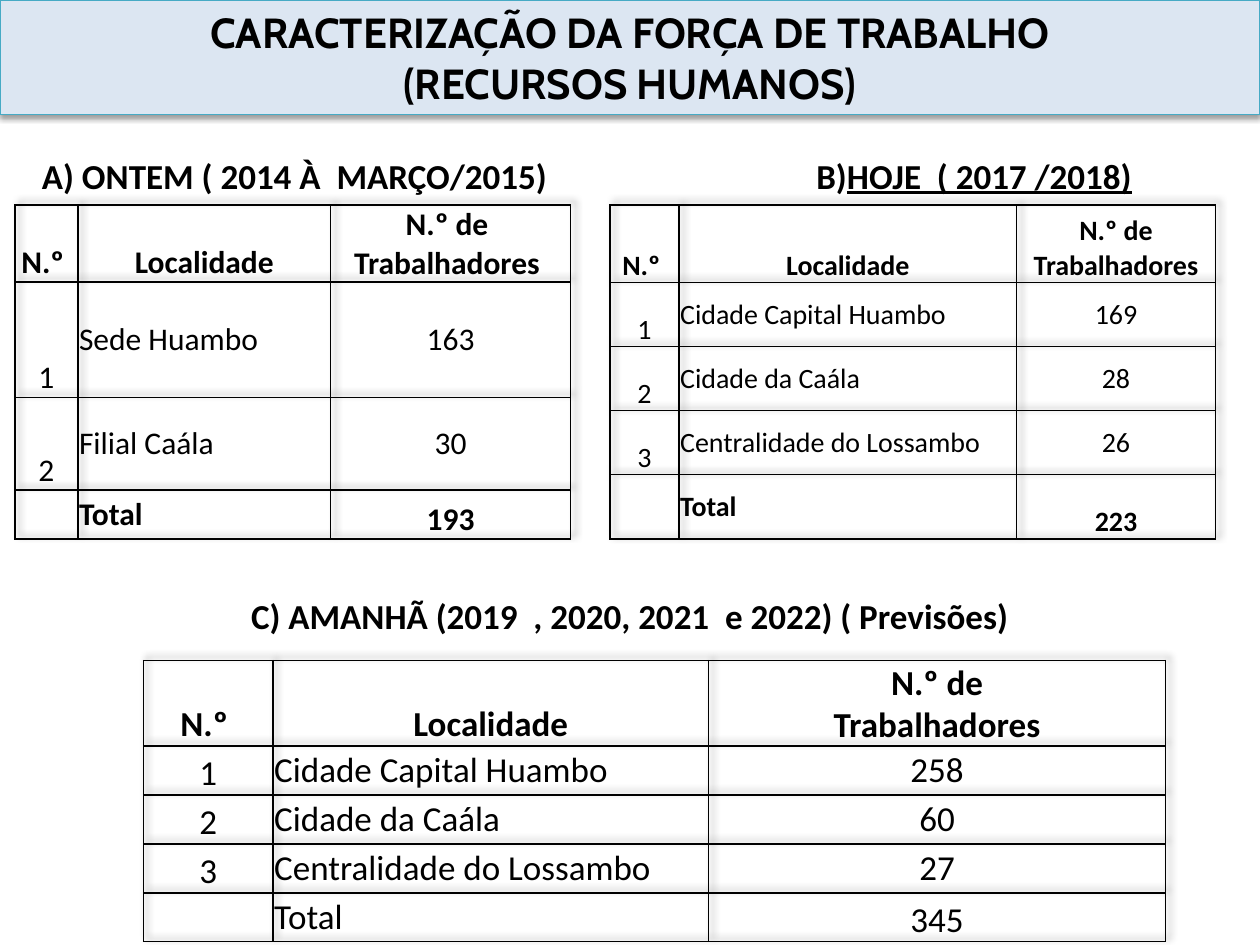
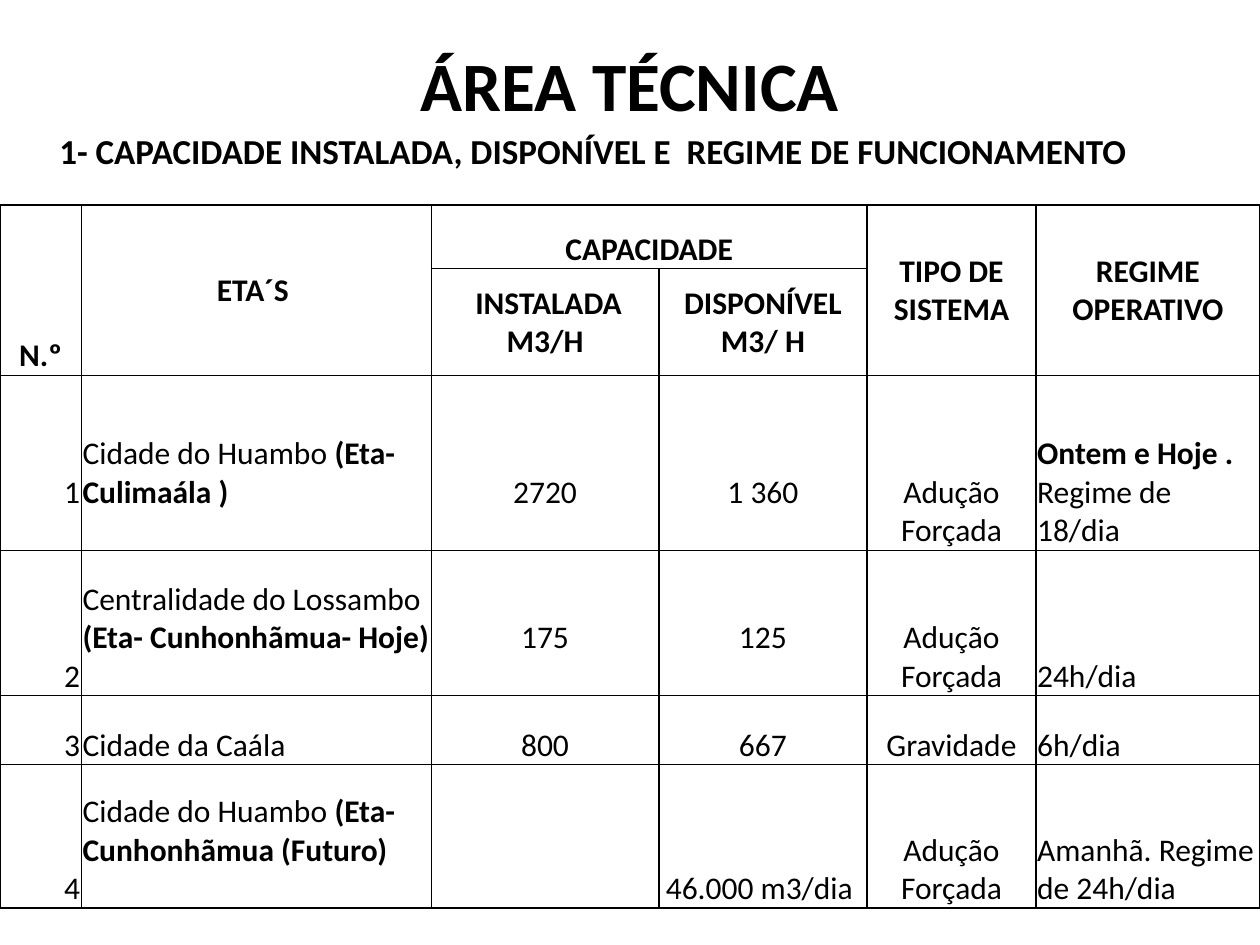
from dataclasses import dataclass

from lxml.etree import SubElement
from pptx import Presentation
from pptx.dml.color import RGBColor
from pptx.enum.shapes import MSO_SHAPE
from pptx.enum.text import MSO_ANCHOR, PP_ALIGN
from pptx.oxml import parse_xml
from pptx.oxml.ns import nsdecls, qn
from pptx.util import Pt


@dataclass(frozen=True)
class Theme:
    ink: str = "000000"
    band: str = "DCE6F2"
    band_line: str = "46AAC5"
    font: str = "Calibri"
    band_font: str = "Cabin"
    title: float = 39.6
    band_title: float = 24
    heading: float = 20
    body: float = 18
    small: float = 16


THEME = Theme()
LEFT, CENTER, RIGHT = PP_ALIGN.LEFT, PP_ALIGN.CENTER, PP_ALIGN.RIGHT
MIDDLE, BOTTOM = MSO_ANCHOR.MIDDLE, MSO_ANCHOR.BOTTOM
SHADOW = (
    f'<a:effectLst {nsdecls("a")}><a:outerShdw blurRad="{{blur}}" dist="{{distance}}" '
    f'dir="{{direction}}" rotWithShape="0"><a:srgbClr val="{THEME.ink}">'
    '<a:alpha val="{alpha}"/></a:srgbClr></a:outerShdw></a:effectLst>'
)


def write(holder, text, size=THEME.heading, font=THEME.font, bold=True,
          align=CENTER, anchor=MIDDLE, margin=0.0, lift=0.0):
    """Fill a shape or cell; text is a string, or a list of (text, font settings) runs."""
    frame = holder.text_frame
    frame.word_wrap = True
    box = holder if hasattr(holder, "margin_left") else frame
    box.vertical_anchor = anchor
    box.margin_left = box.margin_right = box.margin_top = Pt(margin)
    box.margin_bottom = Pt(lift)
    paragraphs = [[(line, {})] for line in text.split("\n")] if isinstance(text, str) else [text]
    for index, runs in enumerate(paragraphs):
        paragraph = frame.add_paragraph() if index else frame.paragraphs[0]
        paragraph.alignment = align
        for content, settings in runs:
            if not content:
                continue
            run = paragraph.add_run()
            run.text = content
            run.font.size, run.font.name, run.font.bold = Pt(size), font, bold
            run.font.color.rgb = RGBColor.from_string(THEME.ink)
            for name, value in settings.items():
                setattr(run.font, name, value)


def add_grid(slide, left, top, widths, heights):
    """Add an unfilled table whose cells all have thin borders."""
    table = slide.shapes.add_table(
        len(heights), len(widths), Pt(left), Pt(top), Pt(sum(widths)), Pt(sum(heights))).table
    table.first_row = table.horz_banding = False
    for column, width in zip(table.columns, widths):
        column.width = Pt(width)
    for row, height in zip(table.rows, heights):
        row.height = Pt(height)
    for cell in table.iter_cells():
        properties = cell._tc.get_or_add_tcPr()
        for side in ("L", "R", "T", "B"):
            line = SubElement(properties, qn(f"a:ln{side}"), w=str(Pt(1)))
            fill = SubElement(line, qn("a:solidFill"))
            SubElement(fill, qn("a:srgbClr"), val=THEME.ink)
        cell.fill.background()
    return table


presentation = Presentation()
presentation.slide_width, presentation.slide_height = Pt(720), Pt(540)
blank = presentation.slide_layouts[6]

# Slide 1: workforce
slide = presentation.slides.add_slide(blank)
band = slide.shapes.add_shape(MSO_SHAPE.RECTANGLE, 0, 0, Pt(720), Pt(65.5))
band.fill.solid()
band.fill.fore_color.rgb = RGBColor.from_string(THEME.band)
band.line.color.rgb = RGBColor.from_string(THEME.band_line)
band.line.width = Pt(0.75)
band._element.spPr.append(parse_xml(SHADOW.format(
    blur=Pt(3.1), distance=Pt(1.6), direction=5400000, alpha=38000)))
write(band, "CARACTERIZAÇÃO DA FORÇA DE TRABALHO\n(RECURSOS HUMANOS)",
      size=THEME.band_title, font=THEME.band_font)

headings = [
    (24, 88, 330, LEFT, "A) ONTEM ( 2014 À  MARÇO/2015)"),
    (466.5, 88, 220, LEFT, [("B)", {}), ("HOJE  ( 2017 /2018)", {"underline": True})]),
    (17, 339.5, 686, CENTER, "C) AMANHÃ (2019  , 2020, 2021  e 2022) ( Previsões)"),
]
for left, top, width, align, text in headings:
    heading = slide.shapes.add_textbox(Pt(left), Pt(top), Pt(width), Pt(24))
    write(heading, text, align=align)

workforce_tables = [
    dict(left=8.5, top=117, widths=[36, 144.5, 137], heights=[44, 66, 53, 28],
         size=THEME.body, bold_total=True, header="N.º de \nTrabalhadores ",
         staff=[("Sede Huambo", 163), ("Filial Caála", 30)]),
    dict(left=348.5, top=117, widths=[39.5, 193, 113.5], heights=[44.5] + [36.6] * 4,
         size=THEME.small, bold_total=True, header="N.º de\n Trabalhadores ",
         staff=[("Cidade Capital Huambo", 169), ("Cidade da Caála", 28),
                ("Centralidade do Lossambo", 26)]),
    dict(left=82, top=377.5, widths=[74, 249, 261], heights=[48.5] + [28] * 4,
         size=THEME.heading, bold_total=False, header="N.º de\n Trabalhadores ",
         staff=[("Cidade Capital Huambo", 258), ("Cidade da Caála", 60),
                ("Centralidade do Lossambo", 27)]),
]
for item in workforce_tables:
    table = add_grid(slide, item["left"], item["top"], item["widths"], item["heights"])
    table._tbl.tblPr.insert(0, parse_xml(SHADOW.format(
        blur=Pt(4), distance=Pt(3), direction=18900000, alpha=40000)))
    places = [(str(number), place, str(count))
              for number, (place, count) in enumerate(item["staff"], 1)]
    total = ("", "Total", str(sum(count for _, count in item["staff"])))
    rows = [("N.º ", "Localidade", item["header"]), *places, total]
    last = len(rows) - 1
    for r, row in enumerate(rows):
        for c, text in enumerate(row):
            at_bottom = r == 0 or c == 0 or (r == last and c == 2)
            write(table.cell(r, c), text, size=item["size"], margin=0.7,
                  bold=r == 0 or (r == last and item["bold_total"]),
                  align=LEFT if r and c == 1 else CENTER,
                  anchor=BOTTOM if at_bottom else MIDDLE)

# Slide 2: technical area
slide = presentation.slides.add_slide(blank)
title = slide.shapes.add_textbox(Pt(36), Pt(23), Pt(648), Pt(50))
write(title, "ÁREA TÉCNICA", size=THEME.title)
subtitle = slide.shapes.add_textbox(Pt(8.5), Pt(74), Pt(661), Pt(24))
write(subtitle, "1- CAPACIDADE INSTALADA, DISPONÍVEL E  REGIME DE FUNCIONAMENTO")

table = add_grid(slide, 0, 117, [46.5, 200, 130, 119, 96.5, 128],
                 [36.5, 61, 100, 83, 39.5, 82])
for column in (0, 1, 4, 5):
    table.cell(0, column).merge(table.cell(1, column))
table.cell(0, 2).merge(table.cell(0, 3))

headers = [
    (0, 0, "N.º", BOTTOM), (0, 1, "ETA´S ", MIDDLE), (0, 2, "CAPACIDADE", BOTTOM),
    (0, 4, "TIPO DE SISTEMA", MIDDLE), (0, 5, "REGIME OPERATIVO", MIDDLE),
    (1, 2, " INSTALADA\nM3/H", MIDDLE), (1, 3, "DISPONÍVEL M3/ H", MIDDLE),
]
for r, c, text, anchor in headers:
    write(table.cell(r, c), text, size=THEME.body, anchor=anchor, margin=0.7)

BOLD = {"bold": True}
# Each plant: its cells, then the columns that sit one line above the bottom
plants = [
    (["1", [("Cidade do Huambo ", {}), ("(Eta- Culimaála )", BOLD)], "2720", "1 360",
      "Adução Forçada", [("Ontem e Hoje . ", BOLD), ("Regime de 18/dia", {})]], (0, 1, 2, 3)),
    (["2", [("Centralidade do Lossambo ", {}), ("(Eta- Cunhonhãmua- Hoje)", BOLD)],
      "175", "125", "Adução Forçada", "24h/dia"], (1, 2, 3)),
    (["3", "Cidade da Caála", "800", "667", "Gravidade", "6h/dia"], ()),
    (["4", [("Cidade do Huambo ", {}), ("(Eta- Cunhonhãmua (Futuro)", BOLD)], "",
      "46.000 m3/dia ", "Adução Forçada", "Amanhã. Regime de 24h/dia"], (1,)),
]
alignments = [RIGHT, LEFT, CENTER, CENTER, CENTER, LEFT]
for r, (cells, lifted) in enumerate(plants, 2):
    for c, text in enumerate(cells):
        write(table.cell(r, c), text, size=THEME.body, bold=False, align=alignments[c],
              anchor=BOTTOM, margin=0.7, lift=22 if c in lifted else 0)

presentation.save("out.pptx")
